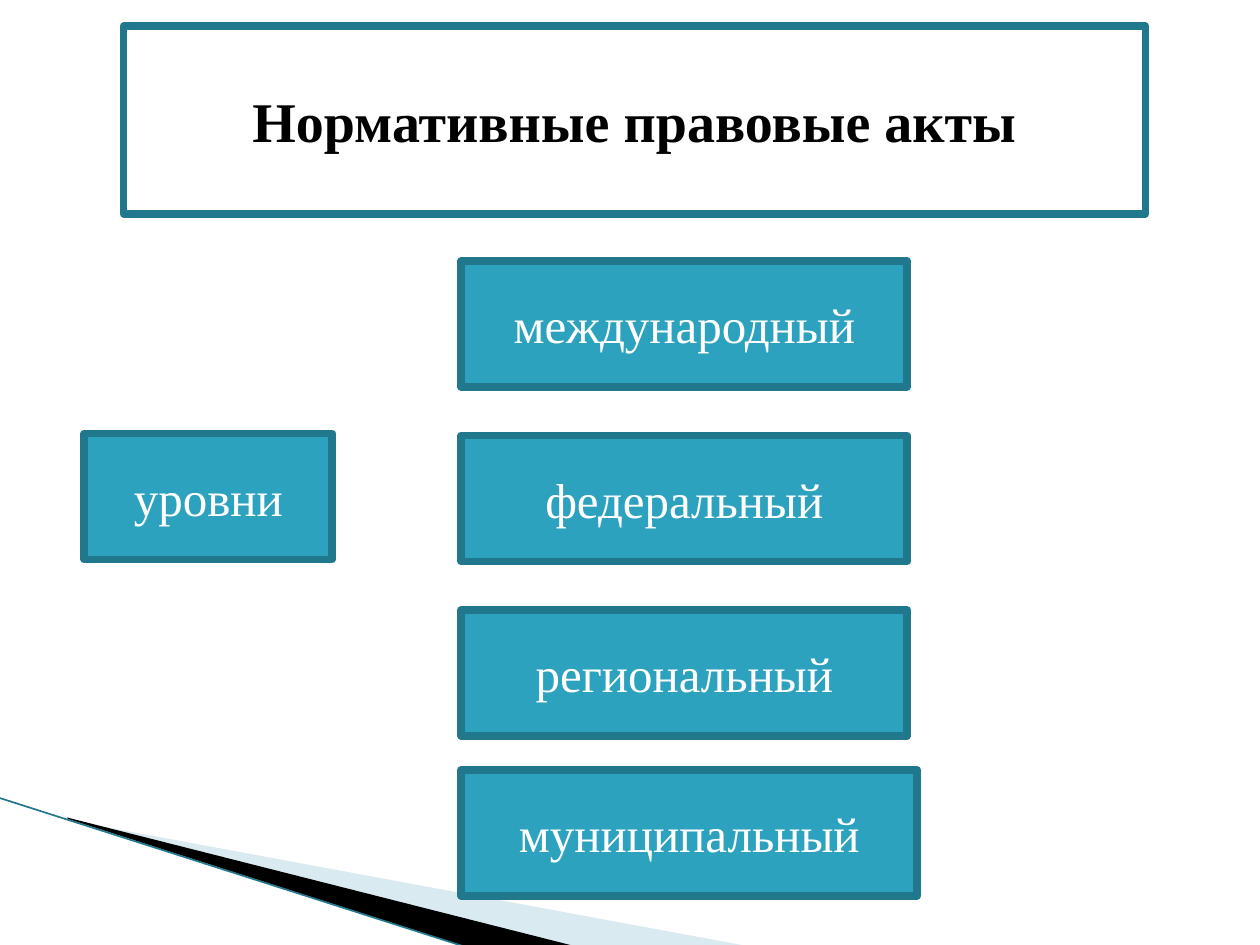
from lxml import etree
from pptx import Presentation
from pptx import util as u
from pptx.dml.color import RGBColor
from pptx.enum import shapes, text
from pptx.oxml.ns import qn


def color(value):
    return RGBColor.from_string(value)


class LevelsSlide:
    font = "Times New Roman"
    teal, dark_teal, pale_blue = "2DA2BF", "21788D", "A0CBDC"
    white, black = "FFFFFF", "000000"
    border = u.Pt(4.33)

    def __init__(self, slide):
        self.slide = slide

    def wedge(self, points, fill, opacity=None):
        corners = [(u.Cm(x), u.Cm(y)) for x, y in points]
        builder = self.slide.shapes.build_freeform(*corners[0])
        builder.add_line_segments(corners[1:], close=True)
        wedge = builder.convert_to_shape()
        wedge.shadow.inherit = False
        wedge.fill.solid()
        wedge.fill.fore_color.rgb = color(fill)
        wedge.line.fill.background()
        if opacity is not None:
            tint = wedge.fill._xPr.find(qn("a:solidFill"))[0]
            etree.SubElement(tint, qn("a:alpha")).set("val", str(opacity * 1000))

    def edge(self, start, end):
        ends = [u.Cm(value) for value in (*start, *end)]
        edge = self.slide.shapes.add_connector(shapes.MSO_CONNECTOR.STRAIGHT, *ends)
        edge.line.color.rgb = color(self.dark_teal)
        edge.line.width = u.Pt(0.95)
        etree.SubElement(edge._element.spPr, qn("a:effectLst"))

    def fill_box(self, box, wording, fill, ink, size, bold=False):
        box.fill.solid()
        box.fill.fore_color.rgb = color(fill)
        box.line.color.rgb = color(self.dark_teal)
        box.line.width = self.border
        frame = box.text_frame
        frame.word_wrap = True
        frame.vertical_anchor = text.MSO_ANCHOR.MIDDLE
        paragraph = frame.paragraphs[0]
        paragraph.alignment = text.PP_ALIGN.CENTER
        run = paragraph.add_run()
        run.text = wording
        run.font.name = self.font
        run.font.size = u.Pt(size)
        run.font.bold = bold
        run.font.color.rgb = color(ink)

    def heading(self, wording, left, top, width, height):
        heading = self.slide.shapes.title
        heading.left, heading.top = u.Cm(left), u.Cm(top)
        heading.width, heading.height = u.Cm(width), u.Cm(height)
        self.fill_box(heading, wording, self.white, self.black, 32, bold=True)

    def level(self, wording, left, top, width, height=2.54):
        place = [u.Cm(value) for value in (left, top, width, height)]
        level = self.slide.shapes.add_shape(shapes.MSO_SHAPE.RECTANGLE, *place)
        level.shadow.inherit = False
        self.fill_box(level, wording, self.teal, self.white, 28)


def main():
    deck = Presentation()
    deck.slide_width, deck.slide_height = u.Cm(25.4), u.Cm(19.05)
    page = LevelsSlide(deck.slides.add_slide(deck.slide_layouts[5]))

    page.wedge([(1.4, 16.54), (15.11, 19.08), (11.58, 19.08), (1.4, 16.51)],
               page.pale_blue, opacity=40)
    page.wedge([(1.35, 16.48), (11.61, 19.08), (9.45, 19.1), (1.37, 16.51)],
               page.black)
    page.edge((-0.03, 16.08), (9.42, 19.1))

    page.heading("Нормативные правовые акты", 2.49, 0.53, 20.6, 3.78)
    page.level("уровни", 1.7, 8.74, 5)
    levels_left, levels_top, pitch = 9.3, 5.26, 3.52
    for row, wording in enumerate(["международный", "федеральный", "региональный"]):
        page.level(wording, levels_left, levels_top + row * pitch, 8.99)
    page.level("муниципальный", levels_left, 15.52, 9.19)

    deck.save("out.pptx")


if __name__ == "__main__":
    main()
